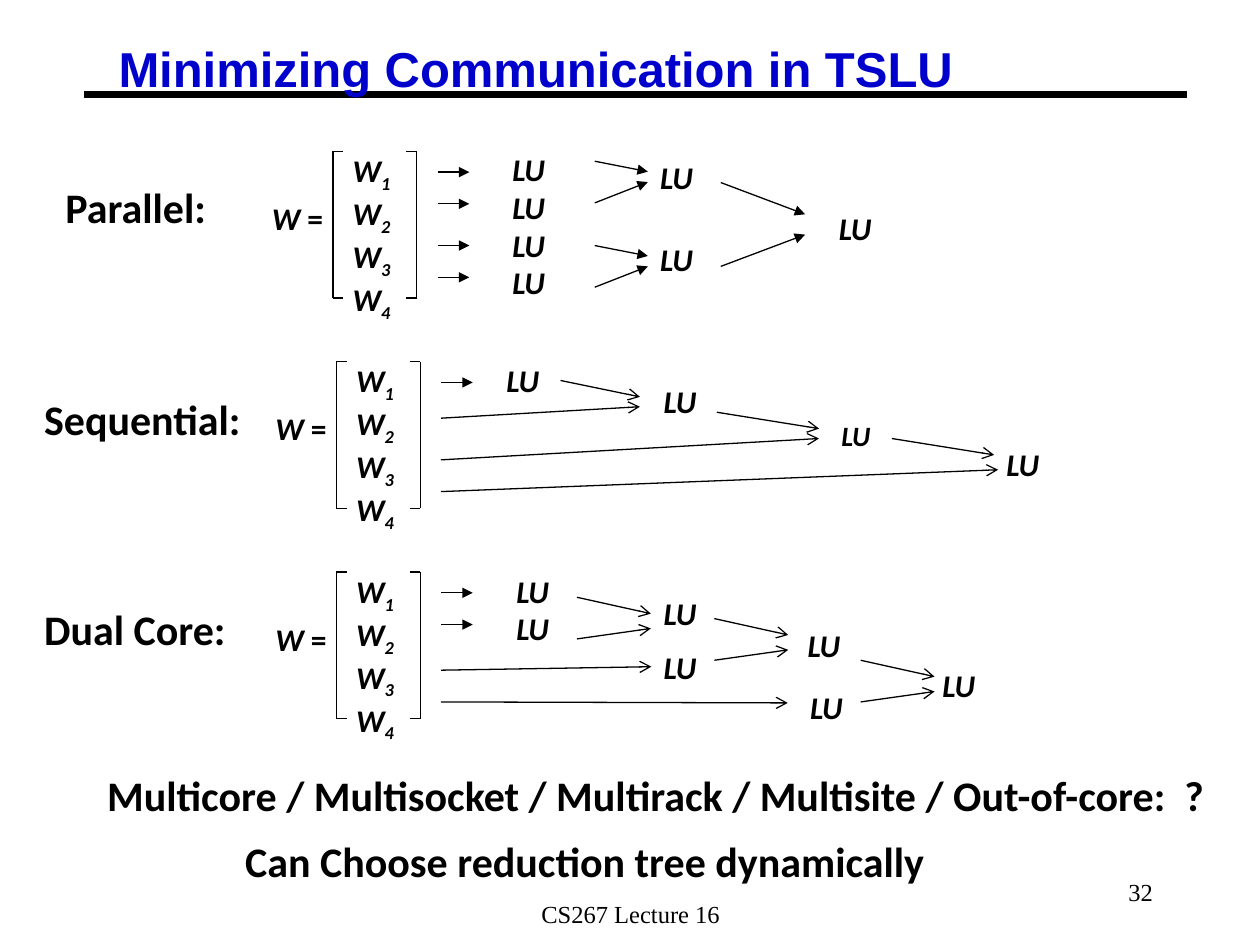
"""Draw the slide on reduction trees for TSLU."""
from dataclasses import dataclass
from typing import Optional

from lxml import etree
from pptx import Presentation
from pptx import util as u
from pptx.dml.color import RGBColor
from pptx.enum import shapes, text
from pptx.oxml import ns

BLACK = RGBColor(0x00, 0x00, 0x00)
BLUE = RGBColor(0x00, 0x00, 0xCC)
BOLD = {"name": "Calibri", "size": u.Pt(24), "bold": True, "italic": False}
MATH = {**BOLD, "size": u.Pt(18), "italic": True}
SERIF = {"name": "Times New Roman", "size": u.Pt(14)}
HEAD = {"name": "Arial", "size": u.Pt(28), "bold": True}
LEFT, MID, RIGHT = text.PP_ALIGN.LEFT, text.PP_ALIGN.CENTER, text.PP_ALIGN.RIGHT
TICK, WIDE, TALL = 0.21, 1.69, 2.96
STEPS = (0.42, 1.06, 1.9, 2.54)


@dataclass
class Node:
    """A column of LU steps."""
    x: float
    y: float
    count: int = 1
    size: int = 18


@dataclass
class Arrow:
    """One arrow between two points."""
    x: float
    y: float
    to_x: float
    to_y: float


@dataclass
class Merge:
    """Two arrows that close in on one step."""
    x: float
    y: float
    width: float
    gap: float
    dip: float
    rise: float

    def arrows(self) -> list[Arrow]:
        """Return the upper and the lower arrow."""
        end, low = self.x + self.width, self.y + self.gap
        return [Arrow(self.x, self.y, end, self.y + self.dip),
                Arrow(self.x, low, end, low - self.rise)]


@dataclass
class Panel:
    """One reduction tree, placed by its bracket corner."""
    name: str
    name_x: float
    name_y: float
    x: float
    y: float
    steps: int
    tip: str
    nodes: list[Node]
    merges: list[Merge]
    arrows: list[Arrow]


PANELS = [
    Panel("Parallel:", 1.07, 3.53, 6.71, 3.05, 4, "triangle",
          [Node(10.08, 2.9, 4), Node(13.06, 3.07), Node(13.06, 4.72), Node(16.66, 4.09)],
          [Merge(11.99, 3.25, 1.07, 0.84, 0.21, 0.42),
           Merge(11.99, 4.95, 1.07, 0.84, 0.21, 0.42),
           Merge(14.53, 3.68, 1.7, 1.69, 0.64, 0.64)], []),
    Panel("Sequential:", 0.64, 7.8, 6.78, 7.29, 1, "arrow",
          [Node(9.96, 7.16), Node(13.13, 7.57), Node(16.71, 8.31, size=16),
           Node(20.04, 8.84)], [],
          [Arrow(11.3, 7.67, 12.9, 8), Arrow(8.89, 8.43, 12.9, 8.2),
           Arrow(14.45, 8.31, 16.51, 8.64), Arrow(8.89, 9.27, 16.51, 8.84),
           Arrow(17.98, 8.84, 20.04, 9.17), Arrow(8.89, 9.91, 20.12, 9.47)]),
    Panel("Dual Core:", 0.64, 12.04, 6.78, 11.53, 2, "arrow",
          [Node(10.16, 11.4, 2), Node(13.13, 11.86), Node(13.13, 12.93),
           Node(16.03, 12.5), Node(16.08, 13.74), Node(18.75, 13.31)],
          [Merge(11.63, 12.04, 1.49, 0.84, 0.33, 0.21),
           Merge(14.4, 12.47, 1.49, 0.84, 0.33, 0.21),
           Merge(17.35, 13.31, 1.49, 0.84, 0.33, 0.21)],
          [Arrow(8.89, 13.51, 13.13, 13.44), Arrow(8.89, 14.15, 15.88, 14.17)]),
]


def style(run, form: dict, color: RGBColor = BLACK) -> None:
    """Set the font of a run."""
    for key, value in form.items():
        setattr(run.font, key, value)
    run.font.color.rgb = color


def write(slide, box: tuple, lines: list[str], form: dict, align=LEFT,
          color: RGBColor = BLACK, wrap: bool = False):
    """Add a text box with one paragraph per line."""
    frame = slide.shapes.add_textbox(*map(u.Cm, box)).text_frame
    frame.word_wrap = wrap
    for i, line in enumerate(lines):
        para = frame.add_paragraph() if i else frame.paragraphs[0]
        para.alignment = align
        run = para.add_run()
        run.text = line
        style(run, form, color)
    return frame


def rule(slide, x: float, y: float, to_x: float, to_y: float,
         tip: Optional[str] = None, width: float = 0.75) -> None:
    """Add a line, with an arrowhead if a tip is named."""
    line = slide.shapes.add_connector(
        shapes.MSO_CONNECTOR.STRAIGHT, *map(u.Cm, (x, y, to_x, to_y)))
    line.line.color.rgb = BLACK
    line.line.width = u.Pt(width)
    if tip:
        etree.SubElement(line.line._get_or_add_ln(), ns.qn("a:tailEnd"), type=tip)
    etree.SubElement(line._element.spPr, ns.qn("a:effectLst"))


def matrix(slide, x: float, y: float) -> None:
    """Draw W and its four bracketed blocks."""
    frame = write(slide, (x - 1.48, y + 0.84, 1.91, 1.02), ["W"], MATH, wrap=True)
    sign = frame.paragraphs[0].add_run()
    sign.text = " ="
    style(sign, {**MATH, "italic": False})
    frame = write(slide, (x + 0.15, y - 0.13, 1.42, 3.33), ["W"] * 4, MATH)
    for i, para in enumerate(frame.paragraphs, 1):
        sub = para.add_run()
        sub.text = str(i)
        style(sub, MATH)
        sub.font._element.set("baseline", "-25000")
    for side, tick in ((x, TICK), (x + WIDE, -TICK)):
        rule(slide, side, y, side, y + TALL)
        for end in (y, y + TALL):
            rule(slide, side, end, side + tick, end)


def draw(slide, panel: Panel) -> None:
    """Draw one reduction tree."""
    write(slide, (panel.name_x, panel.name_y, 5.08, 1.27), [panel.name], BOLD, wrap=True)
    matrix(slide, panel.x, panel.y)
    for step in STEPS[:panel.steps]:
        start, y = panel.x + 2.11, panel.y + step
        rule(slide, start, y, start + 0.64, y, "triangle")
    for node in panel.nodes:
        write(slide, (node.x, node.y, 1.35, 0.25 + 0.77 * node.count),
              ["LU"] * node.count, {**MATH, "size": u.Pt(node.size)})
    pairs = [arrow for merge in panel.merges for arrow in merge.arrows()]
    for a in pairs + panel.arrows:
        rule(slide, a.x, a.y, a.to_x, a.to_y, panel.tip)


def main() -> None:
    """Build and save the slide."""
    deck = Presentation()
    deck.slide_width, deck.slide_height = u.Cm(25.4), u.Cm(19.05)
    slide = deck.slides.add_slide(deck.slide_layouts[6])
    rule(slide, 1.7, 1.9, 23.93, 1.9, width=3.75)
    title = write(slide, (2.21, 0.86, 17.37, 1.22),
                  ["Minimizing Communication in TSLU"], HEAD, color=BLUE)
    pads = {"margin_left": 0.18, "margin_right": 0.18,
            "margin_top": 0.08, "margin_bottom": 0.08}
    for key, value in pads.items():
        setattr(title, key, u.Cm(value))
    title.paragraphs[0].line_spacing = 0.87
    for panel in PANELS:
        draw(slide, panel)
    write(slide, (4.6, 16.71, 14.38, 1.3),
          ["Can Choose reduction tree dynamically"], BOLD, MID)
    write(slide, (1.91, 15.39, 22.96, 1.3),
          ["Multicore / Multisocket / Multirack / Multisite / Out-of-core:  ?"], BOLD)
    for box, line, align in (((8.69, 17.78, 8.05, 1.27), "CS267 Lecture 16", MID),
                             ((18.21, 17.35, 5.28, 1.27), "32", RIGHT)):
        foot = write(slide, box, [line], SERIF, align, wrap=True)
        foot.vertical_anchor = text.MSO_ANCHOR.MIDDLE
    deck.save("out.pptx")


if __name__ == "__main__":
    main()
